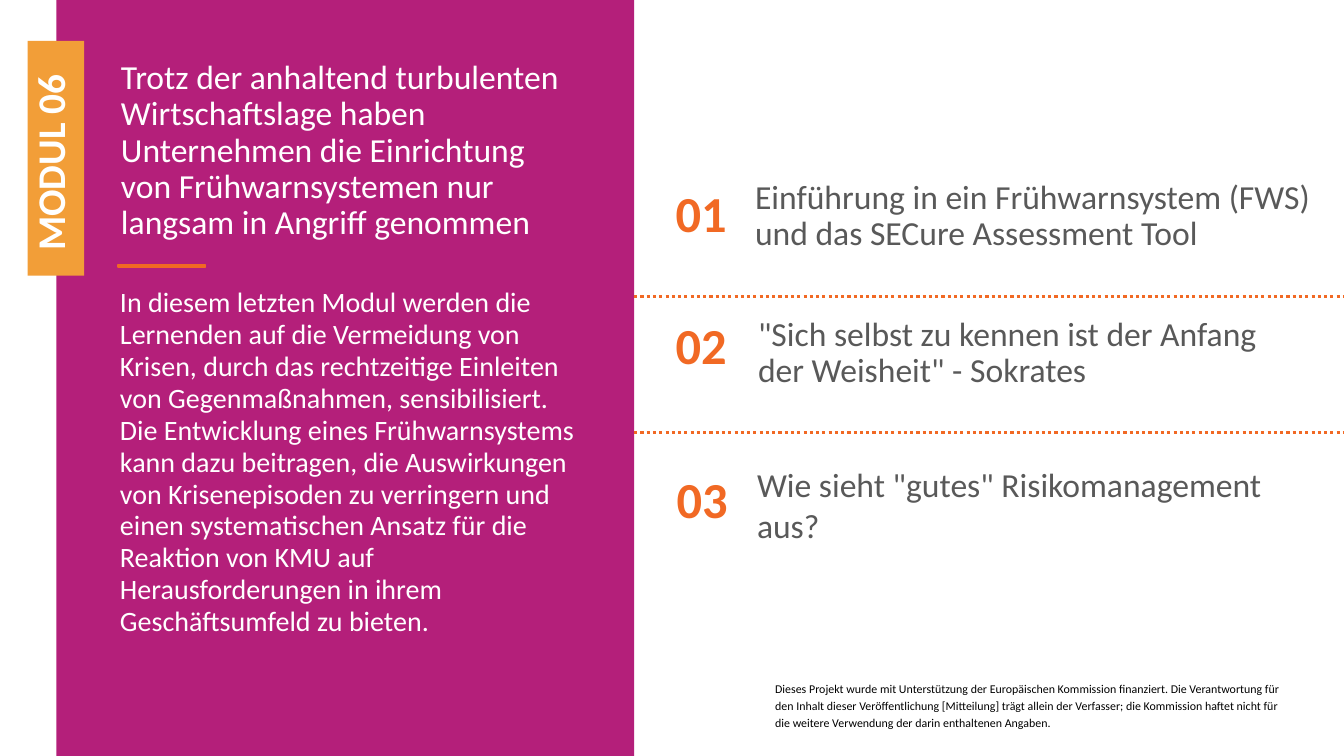
import pptx
import pptx.util
from lxml import etree
from pptx.dml.color import RGBColor
from pptx.enum.dml import MSO_LINE
from pptx.enum.shapes import MSO_CONNECTOR, MSO_SHAPE
from pptx.enum.text import MSO_ANCHOR, MSO_AUTO_SIZE, PP_ALIGN
from pptx.oxml.ns import qn
from pptx.util import Inches

COLORS = {
    "magenta": "B41F7A",
    "amber": "F29E38",
    "orange": "F16924",
    "gray": "595959",
    "white": "FFFFFF",
    "black": "000000",
}
FONT = "Calibri"

LEAD = ("Trotz der anhaltend turbulenten Wirtschaftslage haben Unternehmen die "
        "Einrichtung von Frühwarnsystemen nur langsam in Angriff genommen")
SUMMARY = ("In diesem letzten Modul werden die Lernenden auf die Vermeidung von Krisen, "
           "durch das rechtzeitige Einleiten von Gegenmaßnahmen, sensibilisiert. "
           "Die Entwicklung eines Frühwarnsystems kann dazu beitragen, die Auswirkungen "
           "von Krisenepisoden zu verringern und einen systematischen Ansatz für die "
           "Reaktion von KMU auf Herausforderungen in ihrem Geschäftsumfeld zu bieten.")
DISCLAIMER = ("Dieses Projekt wurde mit Unterstützung der Europäischen Kommission finanziert. "
              "Die Verantwortung für den Inhalt dieser Veröffentlichung [Mitteilung] trägt "
              "allein der Verfasser; die Kommission haftet nicht für die weitere Verwendung "
              "der darin enthaltenen Angaben.")

# Number, its place, topic, its place, topic format
TOPICS = [
    ("01", (6.5, 1.8, 0.91, 0.69),
     "Einführung in ein Frühwarnsystem (FWS) und das SECure Assessment Tool",
     (7.39, 1.7, 5.77, 0.9), {"line_spacing": 0.9}),
    ("02", (6.5, 3.11, 0.91, 0.69),
     '"Sich selbst zu kennen ist der Anfang der Weisheit" - Sokrates',
     (7.42, 3.16, 5.2, 0.69), {"line_spacing": 0.9}),
    ("03", (6.51, 4.64, 0.91, 0.69),
     'Wie sieht "gutes" Risikomanagement aus?',
     (7.41, 4.55, 5.59, 0.91), {"line_spacing": 1.0}),
]


def color(name):
    return RGBColor.from_string(COLORS[name])


def place(shape, at):
    for name, length in zip(("left", "top", "width", "height"), at):
        setattr(shape, name, Inches(length))


def write(shape, text, size, color_name, bold=False, anchor=MSO_ANCHOR.TOP,
          indent=0, **paragraph_format):
    frame = shape.text_frame
    frame.text = text
    frame.word_wrap = True
    frame.auto_size = MSO_AUTO_SIZE.NONE
    frame.vertical_anchor = anchor
    para = frame.paragraphs[0]
    properties = para._p.get_or_add_pPr()
    properties.set("marL", str(Inches(indent)))
    properties.set("indent", "0")
    etree.SubElement(properties, qn("a:buNone"))
    values = {"alignment": PP_ALIGN.LEFT, "space_before": pptx.util.Pt(0)}
    for name, value in {**values, **paragraph_format}.items():
        setattr(para, name, value)
    span = para.runs[0]
    for name, value in {"name": FONT, "size": pptx.util.Pt(size), "bold": bold}.items():
        setattr(span.font, name, value)
    span.font.color.rgb = color(color_name)


def add_text(page, at, text, size, color_name, **text_format):
    box = page.shapes.add_textbox(*map(Inches, at))
    write(box, text, size, color_name, **text_format)


def add_block(page, at, color_name):
    block = page.shapes.add_shape(MSO_SHAPE.RECTANGLE, *map(Inches, at))
    block.shadow.inherit = False
    block.fill.solid()
    block.fill.fore_color.rgb = color(color_name)
    block.line.fill.background()
    return block


def add_divider(page, y):
    divider = page.shapes.add_connector(
        MSO_CONNECTOR.STRAIGHT, Inches(6.29), Inches(y), Inches(13.33), Inches(y))
    divider.line.color.rgb = color("orange")
    divider.line.width = pptx.util.Pt(2.25)
    divider.line.dash_style = MSO_LINE.ROUND_DOT
    etree.SubElement(divider._element.spPr, qn("a:effectLst"))


def main():
    deck = pptx.Presentation()
    deck.slide_width, deck.slide_height = Inches(13.33), Inches(7.5)
    page = deck.slides.add_slide(deck.slide_layouts[1])

    # Panel, placed behind the placeholders
    panel = add_block(page, (0.56, 0, 5.73, 7.5), "magenta")
    page.shapes._spTree.insert(2, panel._element)

    # Lead statement, rule and summary
    lead, summary = page.placeholders
    place(lead, (1.1, 0.55, 4.6, 1.93))
    write(lead, LEAD, 24, "white", line_spacing=0.9)
    rule = add_block(page, (1.17, 2.63, 0.87, 0.02), "orange")
    rule.line.color.rgb = color("orange")
    rule.line.width = pptx.util.Pt(1)
    place(summary, (1.09, 2.79, 4.74, 3.9))
    write(summary, SUMMARY, 20, "white", line_spacing=pptx.util.Pt(22.8))

    # Module tag
    tag = add_block(page, (-0.61, 1.29, 2.33, 0.56), "amber")
    tag.rotation = 270
    write(tag, "MODUL 06", 28, "white", bold=True, anchor=MSO_ANCHOR.MIDDLE,
          indent=0.15, line_spacing=pptx.util.Pt(24.4))

    # Numbered topics
    for number, number_at, topic, topic_at, topic_format in TOPICS:
        add_text(page, number_at, number, 36, "orange", bold=True,
                 anchor=MSO_ANCHOR.MIDDLE, alignment=PP_ALIGN.CENTER, line_spacing=0.9)
        add_text(page, topic_at, topic, 24, "gray", anchor=MSO_ANCHOR.MIDDLE,
                 **topic_format)
    for y in (2.94, 4.29):
        add_divider(page, y)

    # Disclaimer
    add_text(page, (7.59, 6.68, 5.2, 0.6), DISCLAIMER, 8.5, "black", line_spacing=1.2)

    deck.save("out.pptx")


if __name__ == "__main__":
    main()
